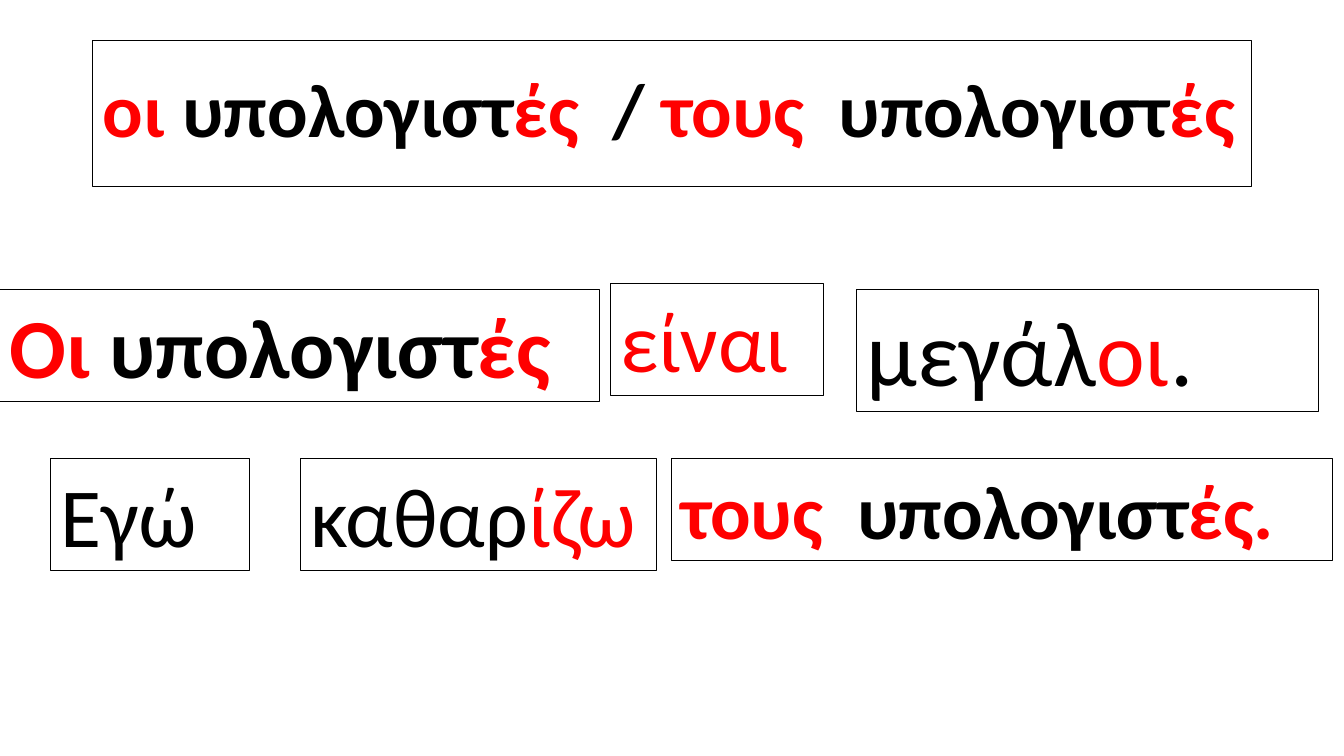
from dataclasses import dataclass

from pptx import Presentation
from pptx.dml.color import RGBColor
from pptx.enum.text import MSO_ANCHOR as Anchor, MSO_AUTO_SIZE as AutoSize, PP_ALIGN as Align
from pptx.util import Cm, Pt


@dataclass(frozen=True)
class Theme:
    font: str = "Calibri"
    ink: RGBColor = RGBColor(0, 0, 0)
    ending: RGBColor = RGBColor(255, 0, 0)
    border: float = 0.75
    small: int = 54
    medium: int = 60
    large: int = 66


THEME = Theme()
CARD_HEIGHTS = {THEME.small: 2.57, THEME.medium: 2.82, THEME.large: 3.07}

TITLE = "|οι| υπολογιστ|ές|  / |τους|  υπολογιστ|ές"
# Each card: left and top offsets within its row, width, text, size, bold
PLURAL_SENTENCE = [
    (0, 0.15, 15.11, "|Οι| υπολογιστ|ές", THEME.medium, True),
    (15.39, 0, 5.36, "|είναι", THEME.medium, False),
    (21.59, 0.15, 11.63, "μεγάλ|οι|.", THEME.large, False),
]
OBJECT_SENTENCE = [
    (0, 0, 5.03, "Εγώ", THEME.medium, False),
    (6.3, 0, 8.97, "καθαρ|ίζω", THEME.medium, False),
    (15.65, 0, 16.66, "|τους|  υπολογιστ|ές.", THEME.small, True),
]


def write(shape, text, *, size, bold=False, anchor=Anchor.TOP,
          spacing=1.0, fit=AutoSize.NONE):
    """Fill a shape with text; each "|" switches between ink and ending colour."""
    frame = shape.text_frame
    frame.word_wrap = True
    frame.auto_size = fit
    frame.vertical_anchor = anchor
    para = frame.paragraphs[0]
    para.alignment = Align.LEFT
    para.line_spacing = spacing
    for index, part in enumerate(text.split("|")):
        if part:
            span = para.add_run()
            span.text = part
            span.font.name = THEME.font
            span.font.size = Pt(size)
            span.font.bold = bold
            span.font.color.rgb = THEME.ending if index % 2 else THEME.ink


def draw_border(shape):
    shape.line.color.rgb = THEME.ink
    shape.line.width = Pt(THEME.border)


def place_title(page, left, top, width, height):
    title = page.shapes.title
    title.left, title.top = Cm(left), Cm(top)
    title.width, title.height = Cm(width), Cm(height)
    draw_border(title)
    write(title, TITLE, size=THEME.small, bold=True,
          anchor=Anchor.MIDDLE, spacing=0.9)


def place_sentence(page, left, top, cards):
    for across, down, width, text, size, bold in cards:
        card = page.shapes.add_textbox(
            Cm(left + across), Cm(top + down), Cm(width), Cm(CARD_HEIGHTS[size]))
        draw_border(card)
        write(card, text, size=size, bold=bold, fit=AutoSize.SHAPE_TO_FIT_TEXT)


def main():
    deck = Presentation()
    deck.slide_width, deck.slide_height = Cm(33.87), Cm(19.05)
    page = deck.slides.add_slide(deck.slide_layouts.get_by_name("Title Only"))
    place_title(page, 2.34, 1.02, 29.21, 3.68)
    place_sentence(page, 0, 7.14, PLURAL_SENTENCE)
    place_sentence(page, 1.27, 11.56, OBJECT_SENTENCE)
    deck.save("out.pptx")


if __name__ == "__main__":
    main()
